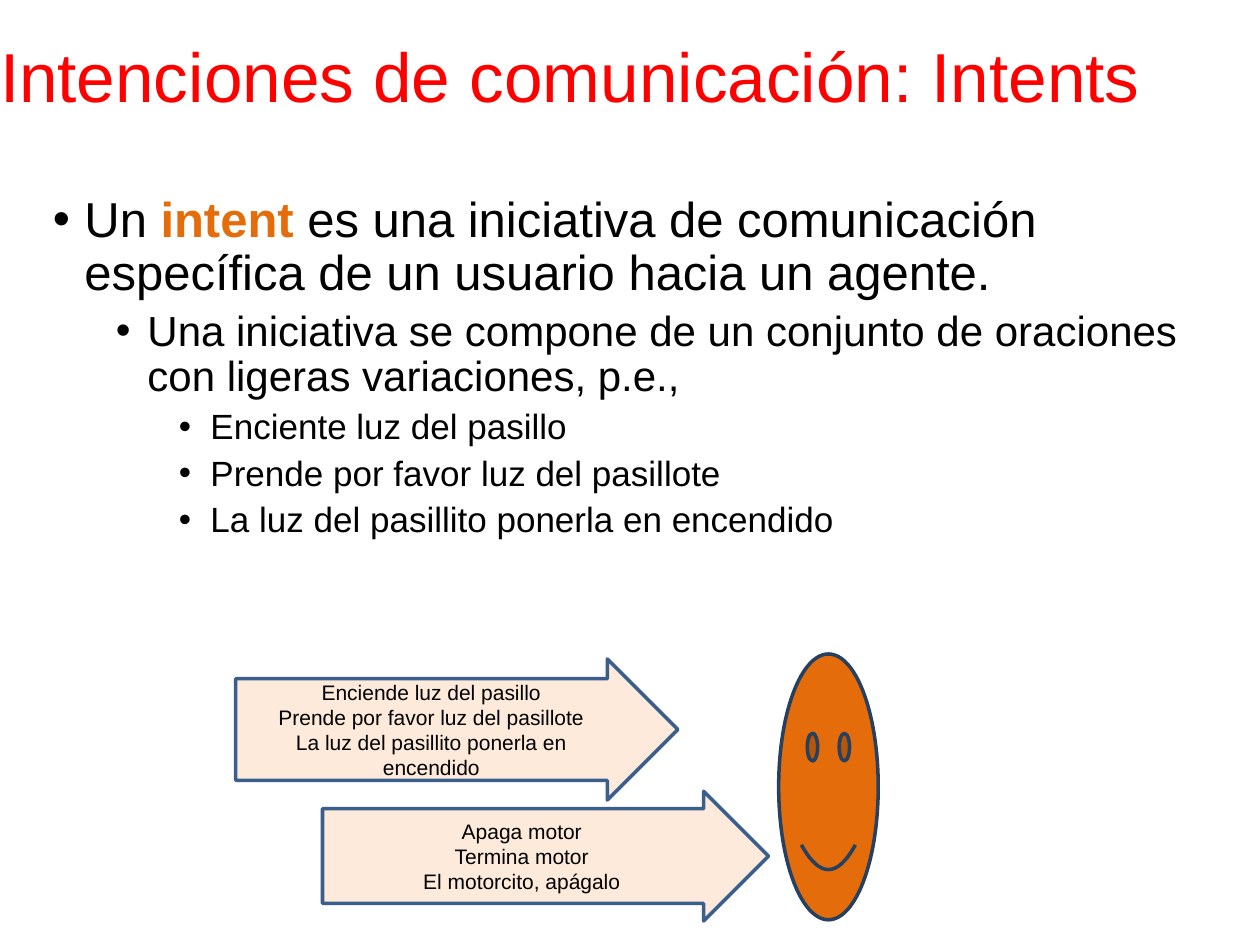
from lxml import etree
from pptx import Presentation
from pptx.dml.color import RGBColor
from pptx.enum import shapes, text
from pptx.oxml import ns
from pptx.util import Pt

ORANGE, BLACK = "E46C0A", "000000"


def color(hex_string):
    return RGBColor.from_string(hex_string)


def add_figure(kind, box, fill, line):
    """Add a preset shape with a 2 pt outline and no shadow."""
    shape = slide.shapes.add_shape(kind, *map(Pt, box))
    shape.shadow.inherit = False
    shape.fill.solid()
    shape.fill.fore_color.rgb = color(fill)
    shape.line.color.rgb = color(line)
    shape.line.width = Pt(2)
    return shape


presentation = Presentation()
presentation.slide_width, presentation.slide_height = Pt(720), Pt(540)
slide = presentation.slides.add_slide(presentation.slide_layouts[1])

# Title and body share the same frame settings
title, body = slide.shapes.title, slide.placeholders[1]
for placeholder, box, anchor in [
    (title, (0, 8.64, 720, 74.16), text.MSO_ANCHOR.MIDDLE),
    (body, (30.24, 111.6, 648, 262.8), text.MSO_ANCHOR.TOP),
]:
    placeholder.left, placeholder.top, placeholder.width, placeholder.height = map(Pt, box)
    frame = placeholder.text_frame
    frame.margin_left = frame.margin_top = frame.margin_right = frame.margin_bottom = 0
    frame.vertical_anchor = anchor
    frame.word_wrap = True
    frame.auto_size = text.MSO_AUTO_SIZE.NONE

title.text_frame.text = "Intenciones de comunicación: Intents"
paragraph = title.text_frame.paragraphs[0]
paragraph.alignment = text.PP_ALIGN.LEFT
paragraph.line_spacing = 0.9
paragraph.font.name = "Arial"
paragraph.font.size = Pt(39.6)
paragraph.font.color.rgb = color("FF0000")

# Bulleted list: level and runs, with the key term as the second run
items = [
    (0, ["Un ", "intent", " es una iniciativa de comunicación específica de un usuario hacia un agente."]),
    (1, ["Una iniciativa se compone de un conjunto de oraciones con ligeras variaciones, p.e.,"]),
    (2, ["Enciente luz del pasillo"]),
    (2, ["Prende por favor luz del pasillote"]),
    (2, ["La luz del pasillito ponerla en encendido"]),
]
sizes = [28, 24, 20]
for index, (level, runs) in enumerate(items):
    frame = body.text_frame
    paragraph = frame.add_paragraph() if index else frame.paragraphs[0]
    paragraph.level = level
    paragraph.line_spacing = 0.9
    paragraph.space_before = Pt(5 if level else 10)
    paragraph.font.name = "Arial"
    paragraph.font.size = Pt(sizes[level])
    paragraph.font.color.rgb = color(BLACK)
    for words in runs:
        run = paragraph.add_run()
        run.text = words
        if words == "intent":
            run.font.bold = True
            run.font.color.rgb = color(ORANGE)
    properties = paragraph._p.get_or_add_pPr()
    properties.set("marL", str(Pt(18 + 36 * level)))
    properties.set("indent", str(Pt(-18)))
    bullet_font = etree.Element(ns.qn("a:buFont"), typeface="Arial")
    bullet = etree.Element(ns.qn("a:buChar"), char="•")
    default_run = properties.find(ns.qn("a:defRPr"))
    default_run.addprevious(bullet_font)
    default_run.addprevious(bullet)

# User utterances reaching the agent
add_figure(shapes.MSO_SHAPE.SMILEY_FACE, (444.96, 373.68, 56.88, 151.92), ORANGE, "254061")
arrows = [
    ((134.64, 376.56, 252.72, 80.64), 0.72,
     ["Enciende luz del pasillo", "Prende por favor luz del pasillote",
      "La luz del pasillito ponerla en encendido"]),
    ((184.32, 452.16, 254.88, 74.16), 0.73,
     ["Apaga motor", "Termina motor", "El motorcito, apágalo"]),
]
for box, shaft, utterances in arrows:
    arrow = add_figure(shapes.MSO_SHAPE.RIGHT_ARROW, box, "FDEADA", "3A5F8C")
    arrow.adjustments[0] = shaft
    arrow.adjustments[1] = 0.5
    arrow.text_frame.text = "\n".join(utterances)
    arrow.text_frame.word_wrap = True
    arrow.text_frame.vertical_anchor = text.MSO_ANCHOR.MIDDLE
    for paragraph in arrow.text_frame.paragraphs:
        paragraph.alignment = text.PP_ALIGN.CENTER
        paragraph.font.name = "Arial"
        paragraph.font.size = Pt(12)
        paragraph.font.color.rgb = color(BLACK)

presentation.save("out.pptx")
